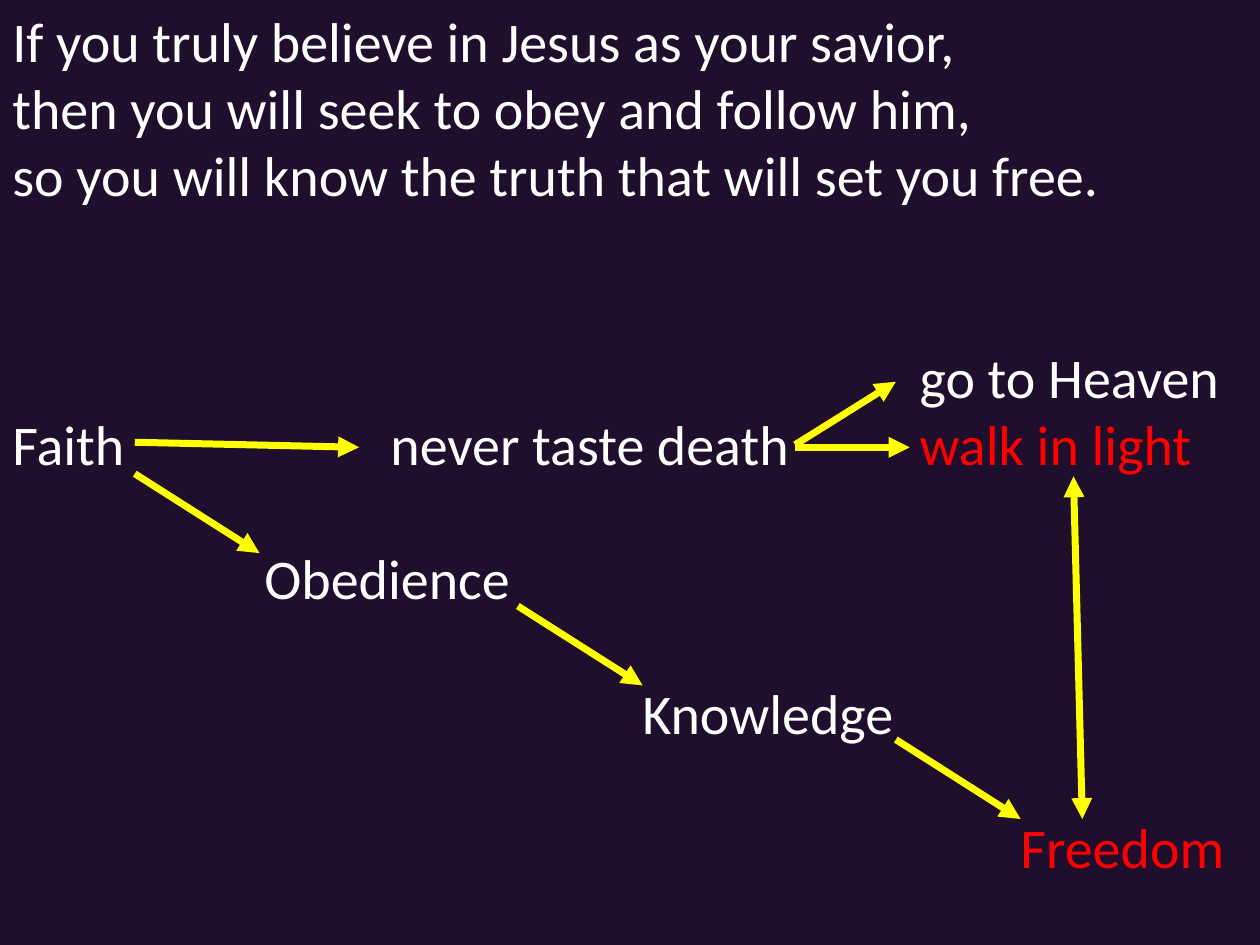
from lxml.etree import SubElement
from pptx import Presentation
from pptx.dml.color import RGBColor
from pptx.enum.shapes import MSO_CONNECTOR as Connector
from pptx.enum.text import MSO_AUTO_SIZE as AutoSize
from pptx.oxml.ns import qn
from pptx.util import Inches, Pt

COLORS = {"night": "1F0E2C", "text": "FFFFFF", "accent": "FF0000", "arrow": "FFFF00"}
FONT, SIZE = "Calibri", 32
LINE_HEIGHT = 38.4  # points taken by one line of text

# Lines skipped above, indent in inches, words, colour
MAIN_LINES = [
    (0, 0, "If you truly believe in Jesus as your savior,", "text"),
    (0, 0, "then you will seek to obey and follow him,", "text"),
    (0, 0, "so you will know the truth that will set you free.", "text"),
    (2, 7.2, "go to Heaven", "text"),
    (0, 0, "Faith", "text"),
    (1, 2, "Obedience", "text"),
    (1, 5, "Knowledge", "text"),
    (1, 8, "Freedom", "accent"),
]


def color(name):
    return RGBColor.from_string(COLORS[name])


def add_words(page, left, top, width, height, lines):
    box = page.shapes.add_textbox(Inches(left), Inches(top), Inches(width), Inches(height))
    frame = box.text_frame
    frame.word_wrap = True
    frame.auto_size = AutoSize.SHAPE_TO_FIT_TEXT
    for number, (skipped, indent, words, color_name) in enumerate(lines):
        para = frame.add_paragraph() if number else frame.paragraphs[0]
        para.space_before = Pt(skipped * LINE_HEIGHT)
        properties = para._p.get_or_add_pPr()
        properties.set("marL", str(Inches(indent)))
        properties.set("indent", "0")
        span = para.add_run()
        span.text = words
        span.font.name = FONT
        span.font.size = Pt(SIZE)
        span.font.color.rgb = color(color_name)


def add_faith_row(page, left, top, height):
    # Phrases that share the line of "Faith"
    add_words(page, left + 3, top, 3.6, height, [(0, 0, "never taste death", "text")])
    add_words(page, left + 7.2, top, 2.8, height, [(0, 0, "walk in light", "accent")])


def add_arrow(page, start, end, both_ends=False):
    x1, y1, x2, y2 = (Inches(value) for value in (*start, *end))
    arrow = page.shapes.add_connector(Connector.STRAIGHT, x1, y1, x2, y2)
    arrow.line.color.rgb = color("arrow")
    arrow.line.width = Pt(4)
    line = arrow.line._get_or_add_ln()
    for tag in ("a:headEnd", "a:tailEnd") if both_ends else ("a:tailEnd",):
        SubElement(line, qn(tag), type="triangle")
    SubElement(arrow._element.spPr, qn("a:effectLst"))


def add_arrows(page, left, top):
    def place(x, y):
        return left + x, top + y

    # Staircase from faith down to freedom
    for x, y in ((1.07, 3.76), (4.11, 4.81), (7.11, 5.87)):
        add_arrow(page, place(x, y), place(x + 0.99, y + 0.63))
    # Faith to never tasting death, then on to light and Heaven
    add_arrow(page, place(1.07, 3.51), place(2.85, 3.55))
    add_arrow(page, place(6.31, 3.55), place(7.22, 3.55))
    add_arrow(page, place(6.31, 3.53), place(7.11, 3.03))
    # Light and freedom point to each other
    add_arrow(page, place(8.52, 3.78), place(8.59, 6.5), both_ends=True)


def main():
    deck = Presentation()
    deck.slide_width, deck.slide_height = Inches(10), Inches(7.5)
    page = deck.slides.add_slide(deck.slide_layouts[6])
    page.background.fill.solid()
    page.background.fill.fore_color.rgb = color("night")
    add_words(page, 0, 0, 10, 7.1, MAIN_LINES)
    add_faith_row(page, 0, 6 * LINE_HEIGHT / 72, 0.64)
    add_arrows(page, 0, 0)
    deck.save("out.pptx")


if __name__ == "__main__":
    main()
